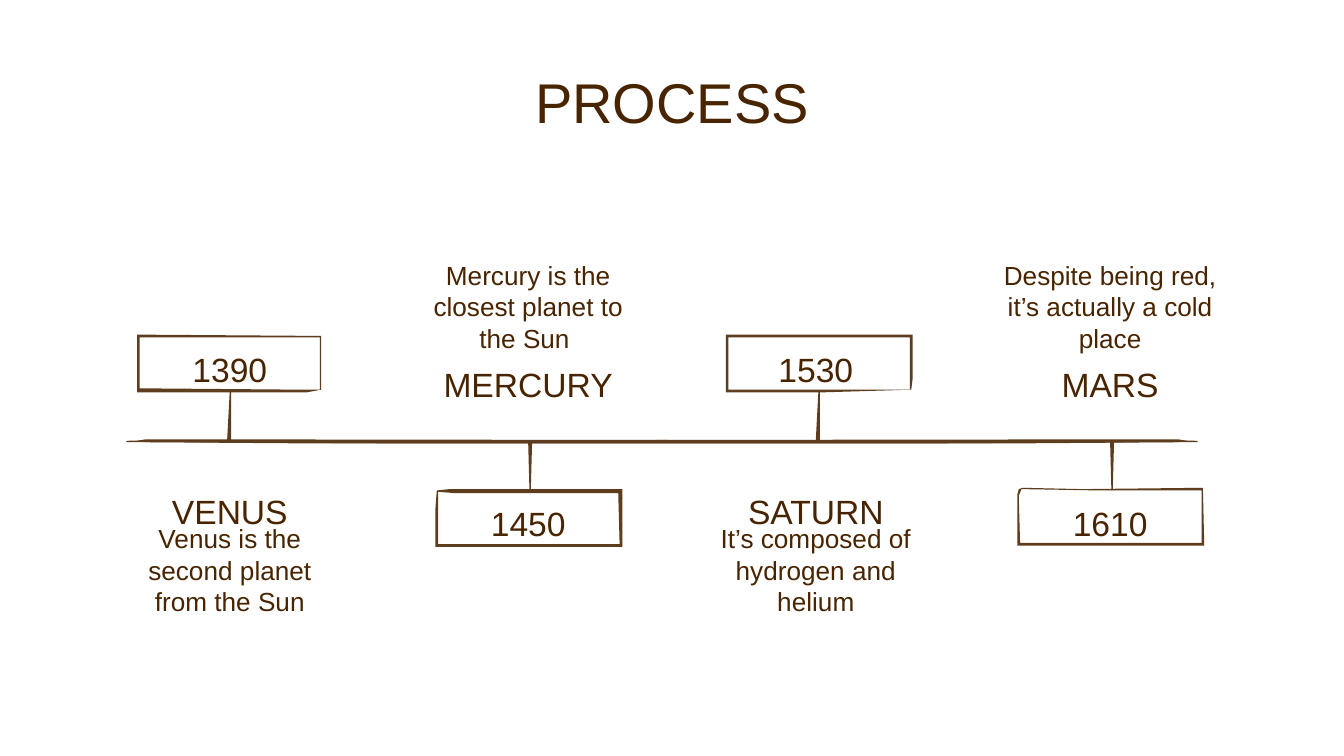
"""Build a hand-drawn timeline slide of four planets."""
from pptx import Presentation
from pptx.dml.color import RGBColor
from pptx.enum.text import MSO_ANCHOR, PP_ALIGN
from pptx.util import Inches, Pt

BROWN, INK = "5D3D1D", "482400"

prs = Presentation()
prs.slide_width = Inches(10)
prs.slide_height = prs.slide_width * 9 // 16
s = prs.slides.add_slide(prs.slide_layouts[6])


def add_text(text, cx, y, w, h, size, anchor=MSO_ANCHOR.TOP, spacing=1.0):
    tf = s.shapes.add_textbox(Inches(cx - w / 2), Inches(y), Inches(w), Inches(h)).text_frame
    tf.word_wrap = True
    tf.vertical_anchor = anchor
    tf.margin_left = tf.margin_right = tf.margin_top = tf.margin_bottom = Inches(0.1)
    p = tf.paragraphs[0]
    p.alignment = PP_ALIGN.CENTER
    p.line_spacing = spacing
    r = p.add_run()
    r.text = text
    r.font.name = "Arial"
    r.font.size = Pt(size)
    r.font.color.rgb = RGBColor.from_string(INK)


def add_stroke(x, y, *contours):
    contours = [[(Inches(x + dx), Inches(y + dy)) for dx, dy in c] for c in contours]
    fb = s.shapes.build_freeform(*contours[0][0])
    fb.add_line_segments(contours[0][1:])
    for c in contours[1:]:
        fb.move_to(*c[0])
        fb.add_line_segments(c[1:])
    sp = fb.convert_to_shape()
    sp.shadow.inherit = False
    sp.fill.solid()
    sp.fill.fore_color.rgb = RGBColor.from_string(BROWN)
    sp.line.fill.background()


add_text("PROCESS", 5, 0.4, 3.69, 0.63, 30)

axis = [(1.98, 3.27), (1.26, 3.27), (1.08, 3.27), (1.02, 3.28), (1.08, 3.29),
        (1.26, 3.29), (3.06, 3.3), (7.5, 3.3), (8.91, 3.29), (8.91, 3.28)]
add_stroke(0, 0, axis)
add_stroke(0, 0, [(9.85 - x, y) for x, y in axis])

steps = [
    ("1390", "VENUS", "Venus is the second planet from the Sun", 1.71, 1.69, True, 1.02, 2.49,
     [(0, 0), (1.37, 0.01), (1.37, 0.41), (1.26, 0.43), (0, 0.43)],
     [(0.02, 0.02), (0.02, 0.4), (1.24, 0.41), (1.36, 0.41), (1.36, 0.02)]),
    ("1450", "MERCURY", "Mercury is the closest planet to the Sun ", 3.93, 1.79, False, 3.24, 3.64,
     [(0.01, 0.01), (0.1, 0), (1.39, 0), (1.39, 0.43), (0, 0.43), (0, 0.14)],
     [(0.02, 0.05), (0.02, 0.41), (1.37, 0.41), (1.36, 0.03), (0.15, 0.03), (0.02, 0.02)]),
    ("1530", "SATURN", "It’s composed of hydrogen and helium", 6.07, 1.79, True, 5.4, 2.49,
     [(0, 0), (1.39, 0), (1.39, 0.33), (1.38, 0.41), (0.71, 0.43), (0, 0.43)],
     [(0.02, 0.02), (0.02, 0.41), (0.69, 0.41), (1.37, 0.41), (1.37, 0.02)]),
    ("1610", "MARS", "Despite being red, it’s actually a cold place", 8.26, 1.79, False, 7.57, 3.63,
     [(0.01, 0.01), (0.04, 0), (0.48, 0.01), (1.38, 0), (1.39, 0.43), (0, 0.43), (0, 0.05)],
     [(0.01, 0.06), (0.02, 0.41), (1.37, 0.41), (1.37, 0.02), (0.61, 0.02), (0.03, 0.01)]),
]
for year, planet, note, cx, note_w, box_above, box_x, box_y, outer, inner in steps:
    if box_above:
        year_y, planet_y, note_y = 2.45, 3.51, 3.95
        add_stroke(box_x + 0.67, 2.91, [(0.02, 0), (0.03, 0), (0.03, 0.37), (0, 0.37)])
    else:
        year_y, planet_y, note_y = 3.6, 2.56, 1.99
        add_stroke(box_x + 0.69, 3.28, [(0, 0), (0.03, 0), (0.02, 0.37), (0.01, 0.37)])
    add_stroke(box_x, box_y, outer, inner)
    add_text(note, cx, note_y, note_w, 0.74, 14, anchor=MSO_ANCHOR.BOTTOM)
    add_text(planet, cx, planet_y, 1.69, 0.44, 18, spacing=1.15)
    add_text(year, cx, year_y, 1.05, 0.44, 18, spacing=1.15)

prs.save("out.pptx")
